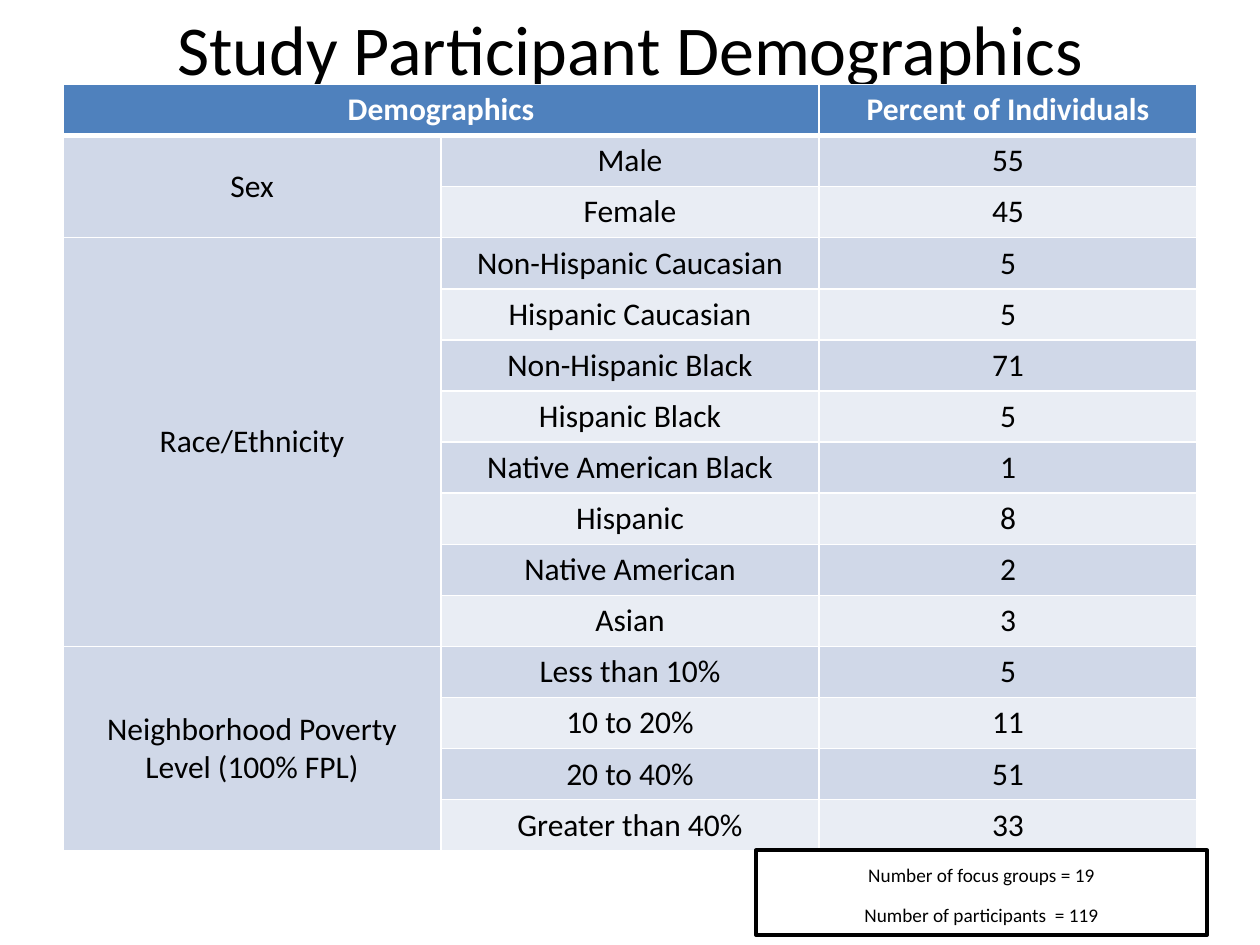
from lxml.etree import SubElement
from pptx import Presentation
from pptx.dml.color import RGBColor
from pptx.enum.shapes import MSO_SHAPE as Shape
from pptx.enum.text import MSO_ANCHOR as Anchor, MSO_AUTO_SIZE as AutoSize, PP_ALIGN as Align
from pptx.oxml.ns import qn
from pptx.util import Inches, Pt

HEADINGS = ("Demographics", "Percent of Individuals")
GROUPS = {
    "Sex": [("Male", 55), ("Female", 45)],
    "Race/Ethnicity": [
        ("Non-Hispanic Caucasian", 5),
        ("Hispanic Caucasian", 5),
        ("Non-Hispanic Black", 71),
        ("Hispanic Black", 5),
        ("Native American Black", 1),
        ("Hispanic", 8),
        ("Native American", 2),
        ("Asian", 3),
    ],
    "Neighborhood Poverty Level (100% FPL)": [
        ("Less than 10%", 5),
        ("10 to 20%", 11),
        ("20 to 40%", 51),
        ("Greater than 40%", 33),
    ],
}
SAMPLE_SIZES = ["Number of focus groups = 19", "Number of participants  = 119"]


def color(value):
    return RGBColor.from_string(value)


def write(frame, *lines, size=18, ink="000000", bold=False, after=0, anchor=Anchor.MIDDLE):
    frame.word_wrap = True
    frame.vertical_anchor = anchor
    for index, line in enumerate(lines):
        paragraph = frame.paragraphs[0] if index == 0 else frame.add_paragraph()
        paragraph.alignment = Align.CENTER
        paragraph.space_after = Pt(after)
        run = paragraph.add_run()
        run.text = line
        font = run.font
        font.name, font.size, font.bold = "Calibri", Pt(size), bold
        font.color.rgb = color(ink)


class DemographicsSlide:
    """Holds the style and the current slide, and adds each kind of element to it."""

    header, group_band, light_band, white, black = "4F81BD", "D0D8E8", "E9EDF4", "FFFFFF", "000000"

    def __init__(self, presentation):
        self.slide = presentation.slides.add_slide(presentation.slide_layouts[5])

    def title(self, text, left, top, width, height):
        heading = self.slide.shapes.title
        heading.left, heading.top = Inches(left), Inches(top)
        heading.width, heading.height = Inches(width), Inches(height)
        write(heading.text_frame, text, size=40)
        heading.text_frame.auto_size = AutoSize.NONE

    def style_cell(self, cell, fill, top=1, bottom=1):
        properties = cell._tc.get_or_add_tcPr()
        for side, width in (("L", 1), ("R", 1), ("T", top), ("B", bottom)):
            border = SubElement(properties, qn(f"a:ln{side}"), w=str(Pt(width)))
            paint = SubElement(border, qn("a:solidFill"))
            SubElement(paint, qn("a:srgbClr"), val=self.white)
        cell.fill.solid()
        cell.fill.fore_color.rgb = color(fill)

    def band(self, row, column):
        if row == 0:
            return self.header
        return self.group_band if column == 0 or row % 2 else self.light_band

    def table(self, headings, groups, left, top, width, height):
        row_count = 1 + sum(len(entries) for entries in groups.values())
        table = self.slide.shapes.add_table(
            row_count, 3, Inches(left), Inches(top), Inches(width), Inches(height)
        ).table
        for row in range(row_count):
            for column in range(3):
                self.style_cell(
                    table.cell(row, column),
                    self.band(row, column),
                    top=3 if row == 1 else 1,
                    bottom=3 if row == 0 else 1,
                )
        table.cell(0, 0).merge(table.cell(0, 1))
        for column, heading in zip((0, 2), headings):
            write(table.cell(0, column).text_frame, heading, ink=self.white, bold=True)
            table.cell(0, column).vertical_anchor = Anchor.MIDDLE
        row = 1
        for group, entries in groups.items():
            table.cell(row, 0).merge(table.cell(row + len(entries) - 1, 0))
            self.body_cell(table.cell(row, 0), group)
            for label, percent in entries:
                self.body_cell(table.cell(row, 1), label)
                self.body_cell(table.cell(row, 2), str(percent))
                row += 1

    def body_cell(self, cell, text):
        write(cell.text_frame, text)
        cell.vertical_anchor = Anchor.MIDDLE

    def note_box(self, lines, left, top, width, height):
        box = self.slide.shapes.add_shape(
            Shape.RECTANGLE, Inches(left), Inches(top), Inches(width), Inches(height)
        )
        box.shadow.inherit = False
        box.fill.background()
        box.line.color.rgb = color(self.black)
        box.line.width = Pt(2.25)
        frame = box.text_frame
        frame.margin_left = frame.margin_right = Inches(0.1)
        frame.margin_top = frame.margin_bottom = Inches(0.1)
        write(frame, *lines, size=11, after=10, anchor=Anchor.TOP)


def main():
    presentation = Presentation()
    presentation.slide_width, presentation.slide_height = Inches(10), Inches(7.5)
    page = DemographicsSlide(presentation)
    page.title("Study Participant Demographics", 0.5, -0.04, 9, 0.83)
    page.table(HEADINGS, GROUPS, 0.5, 0.67, 9, 6.08)
    page.note_box(SAMPLE_SIZES, 6, 6.75, 3.58, 0.67)
    presentation.save("out.pptx")


if __name__ == "__main__":
    main()
